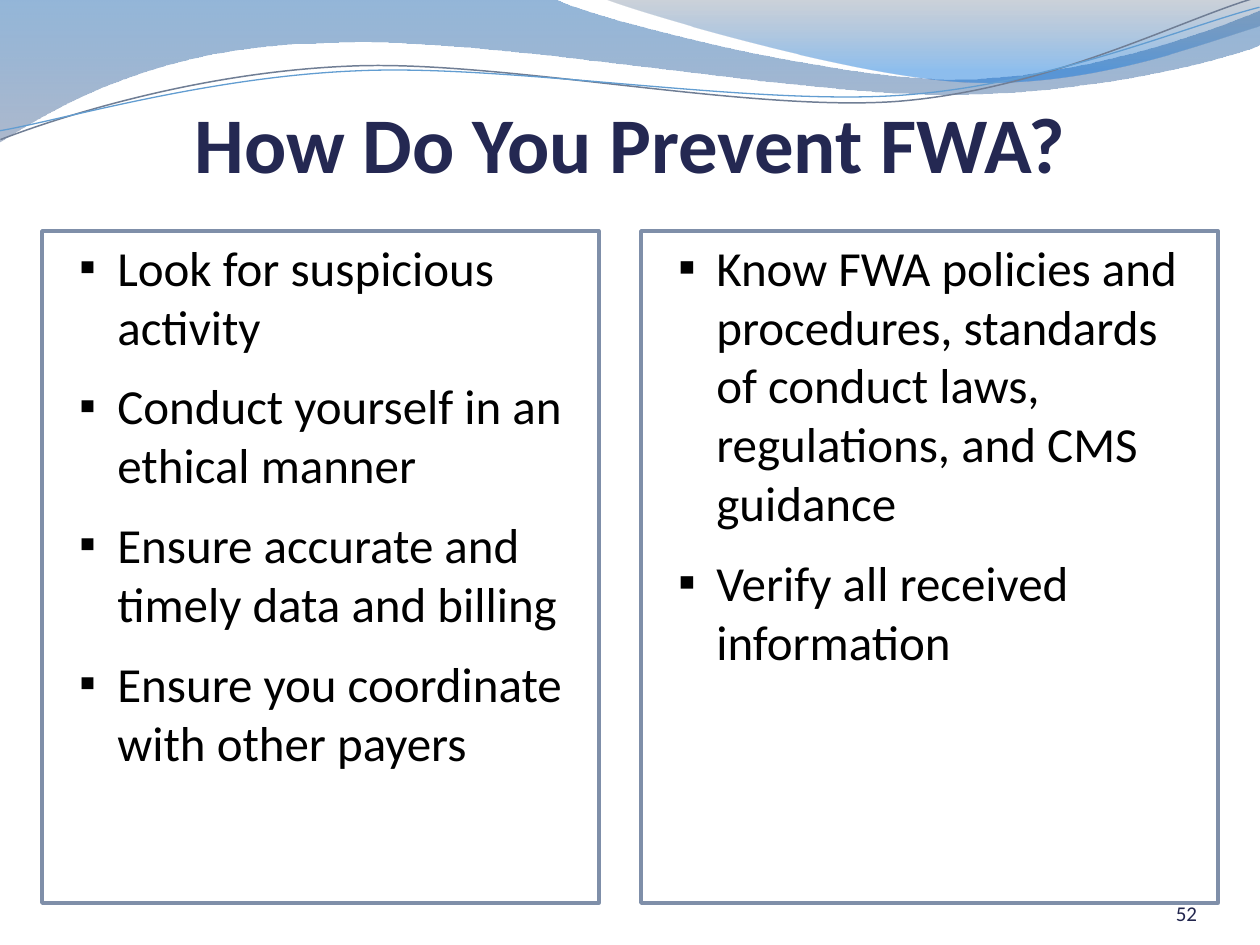
from dataclasses import dataclass
from itertools import chain
from typing import Optional

from lxml.etree import SubElement
from pptx import Presentation
from pptx.dml.color import RGBColor
from pptx.enum.shapes import MSO_SHAPE
from pptx.enum.text import MSO_ANCHOR, PP_ALIGN
from pptx.oxml.ns import qn
from pptx.util import Emu, Pt

SCALE = 914400 / 126


@dataclass(frozen=True)
class Theme:
    font: str = "Calibri"
    title: str = "242852"
    body: str = "000000"
    number: str = "22264E"
    panel_fill: str = "FFFFFF"
    panel_line: str = "7F8FA9"
    title_size: int = 45
    body_size: int = 28
    number_size: int = 12
    item_gap: int = 12


@dataclass(frozen=True)
class Area:
    left: int
    top: int
    width: int
    height: int

    def emu(self) -> tuple:
        return tuple(px(n) for n in (self.left, self.top, self.width, self.height))


@dataclass(frozen=True)
class Stop:
    position: float
    color: str
    opacity: int


@dataclass(frozen=True)
class Wave:
    """Each step holds one point for a straight line or three for a curve."""
    start: tuple
    steps: tuple
    stops: tuple = ()
    line: Optional[str] = None
    line_width: float = 0
    rotation: float = 0


@dataclass(frozen=True)
class Panel:
    area: Area
    items: tuple
    bullet_percent: int = 100


@dataclass(frozen=True)
class Label:
    area: Area
    text: str
    size: int
    color: str
    align: PP_ALIGN
    bold: bool = False
    top_inset: int = 0


THEME = Theme()

WAVES = (
    Wave((0, 0), (
        ((554, -1),),
        ((600, 21), (837, 79), (955, 79)),
        ((1075, 79), (1207, 33), (1260, 11)),
        ((1261, 45),),
        ((1239, 55), (1096, 96), (940, 94)),
        ((784, 94), (481, 35), (324, 43)),
        ((163, 45), (58, 105), (-1, 142)),
        ((0, 0),),
    ), stops=(Stop(0, "125EAA", 45), Stop(1, "697FA4", 55))),
    Wave((604, -1), (
        ((641, 14), (859, 78), (969, 82)),
        ((1097, 87), (1211, 40), (1260, 26)),
        ((1260, 0),),
        ((604, -1),),
    ), stops=(Stop(0, "596982", 30), Stop(0.8, "0670DA", 45))),
    Wave((-2, 110), (
        ((58, 90), (199, 52), (350, 53)),
        ((499, 53), (745, 118), (896, 114)),
        ((1049, 109), (1184, 45), (1260, 27)),
    ), line="707E95", line_width=0.85, rotation=357.3),
    Wave((-2, 101), (
        ((57, 94), (207, 57), (357, 58)),
        ((509, 58), (750, 112), (902, 108)),
        ((1052, 104), (1188, 52), (1262, 37)),
    ), line="629DD1", line_width=0.75, rotation=357.3),
)

TITLE = Label(Area(63, 97, 1134, 92), "How Do You Prevent FWA?", THEME.title_size,
              THEME.title, PP_ALIGN.CENTER, bold=True, top_inset=6)
NUMBER = Label(Area(1092, 876, 105, 50), "52", THEME.number_size,
               THEME.number, PP_ALIGN.RIGHT)

DUTIES = Panel(Area(42, 231, 557, 672), (
    "Look for suspicious activity",
    "Conduct yourself in an ethical manner",
    "Ensure accurate and timely data and billing",
    "Ensure you coordinate with other payers",
), bullet_percent=95)
KNOWLEDGE = Panel(Area(641, 231, 577, 672), (
    "Know FWA policies and procedures, standards of conduct laws, "
    "regulations, and CMS guidance",
    "Verify all received information",
))


def px(length: float) -> Emu:
    return Emu(round(length * SCALE))


def rgb(color: str) -> RGBColor:
    return RGBColor.from_string(color)


def bend_curves(shape, steps: tuple) -> None:
    """Join each run of three line points into one cubic curve."""
    lines = iter(list(shape._element.iter(qn("a:lnTo"))))
    for step in steps:
        parts = [next(lines) for _ in step]
        if len(parts) == 1:
            continue
        outline = parts[0].getparent()
        curve = SubElement(outline, qn("a:cubicBezTo"))
        parts[0].addprevious(curve)
        for part in parts:
            curve.append(part[0])
            outline.remove(part)


def draw_wave(page, wave: Wave) -> None:
    start, *rest = [(px(x), px(y)) for x, y in chain([wave.start], *wave.steps)]
    builder = page.shapes.build_freeform(*start, scale=1.0)
    builder.add_line_segments(rest, close=bool(wave.stops))
    shape = builder.convert_to_shape()
    bend_curves(shape, wave.steps)
    shape.rotation = wave.rotation
    shape.shadow.inherit = False
    if wave.line:
        shape.fill.background()
        shape.line.color.rgb = rgb(wave.line)
        shape.line.width = Pt(wave.line_width)
        return
    shape.line.fill.background()
    shape.fill.gradient()
    shape.fill.gradient_angle = 270
    for target, stop in zip(shape.fill.gradient_stops, wave.stops):
        target.position = stop.position
        target.color.rgb = rgb(stop.color)
    for color, stop in zip(shape._element.iter(qn("a:srgbClr")), wave.stops):
        SubElement(color, qn("a:alpha"), val=str(stop.opacity * 1000))


def add_span(para, text: str, size: int, color: str, bold: bool = False) -> None:
    span = para.add_run()
    span.text = text
    span.font.name = THEME.font
    span.font.size = Pt(size)
    span.font.bold = bold
    span.font.color.rgb = rgb(color)


def draw_label(page, label: Label) -> None:
    frame = page.shapes.add_textbox(*label.area.emu()).text_frame
    frame.word_wrap = True
    frame.vertical_anchor = MSO_ANCHOR.BOTTOM
    frame.margin_left = frame.margin_right = frame.margin_bottom = 0
    frame.margin_top = px(label.top_inset)
    para = frame.paragraphs[0]
    para.alignment = label.align
    add_span(para, label.text, label.size, label.color, label.bold)


def add_bullet(para, percent: int) -> None:
    properties = para._p.get_or_add_pPr()
    properties.set("marL", str(px(63)))
    properties.set("indent", str(px(-38)))
    color = SubElement(properties, qn("a:buClr"))
    SubElement(color, qn("a:srgbClr"), val=THEME.body)
    SubElement(properties, qn("a:buSzPct"), val=str(percent * 1000))
    SubElement(properties, qn("a:buFont"), typeface=THEME.font)
    SubElement(properties, qn("a:buChar"), char="▪")


def draw_panel(page, panel: Panel) -> None:
    box = page.shapes.add_shape(MSO_SHAPE.RECTANGLE, *panel.area.emu())
    box.shadow.inherit = False
    box.fill.solid()
    box.fill.fore_color.rgb = rgb(THEME.panel_fill)
    box.line.color.rgb = rgb(THEME.panel_line)
    box.line.width = Pt(2)
    frame = box.text_frame
    frame.word_wrap = True
    frame.vertical_anchor = MSO_ANCHOR.TOP
    for index, item in enumerate(panel.items):
        para = frame.add_paragraph() if index else frame.paragraphs[0]
        para.alignment = PP_ALIGN.LEFT
        if index:
            para.space_before = Pt(THEME.item_gap)
        add_bullet(para, panel.bullet_percent)
        add_span(para, item, THEME.body_size, THEME.body)


def main() -> None:
    deck = Presentation()
    deck.slide_width, deck.slide_height = px(1260), px(945)
    page = deck.slides.add_slide(deck.slide_layouts[6])
    for wave in WAVES:
        draw_wave(page, wave)
    draw_label(page, TITLE)
    draw_panel(page, DUTIES)
    draw_label(page, NUMBER)
    draw_panel(page, KNOWLEDGE)
    deck.save("out.pptx")


if __name__ == "__main__":
    main()
